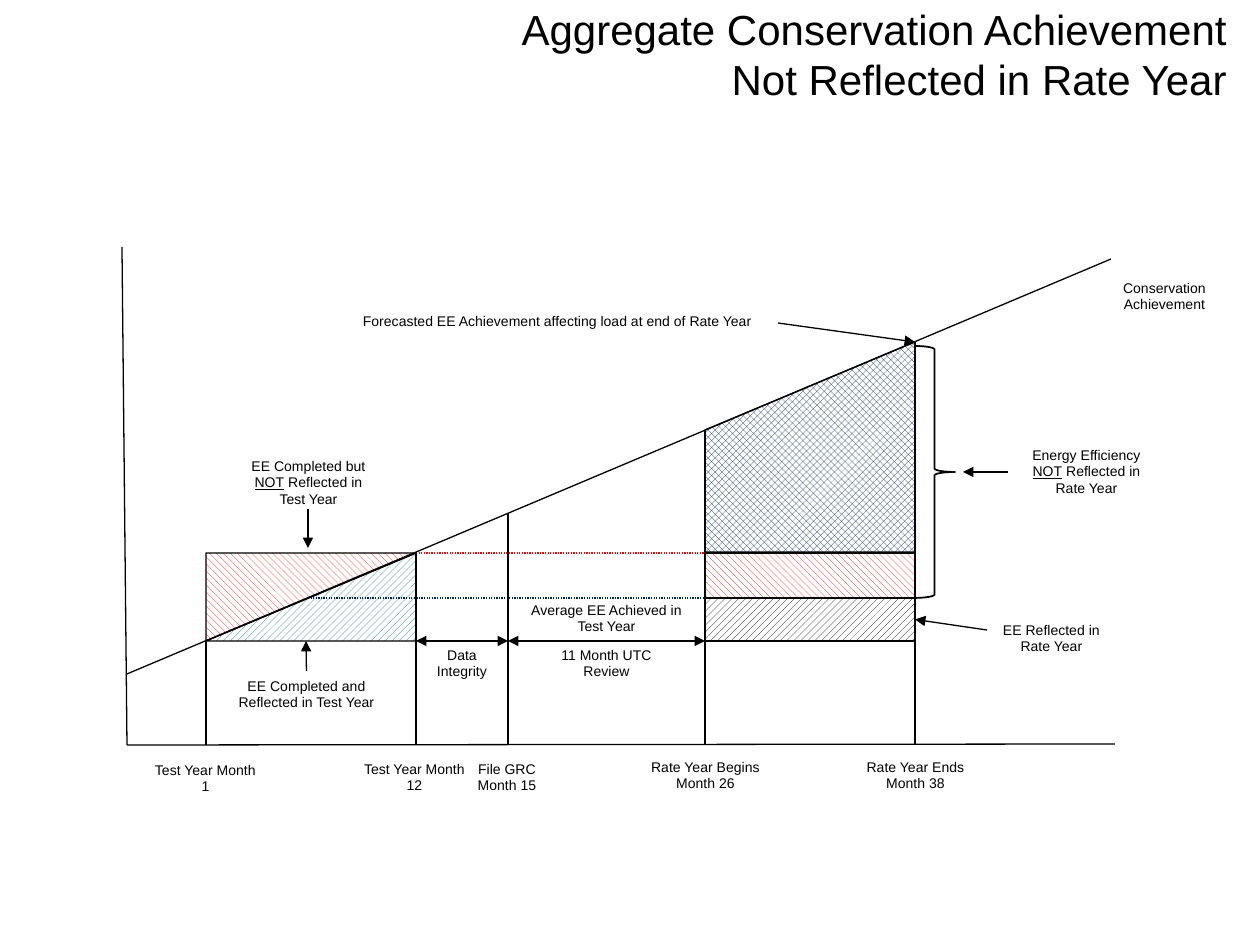
from dataclasses import dataclass

from lxml import etree
from pptx import Presentation
from pptx import util as u
from pptx.dml.color import RGBColor
from pptx.enum import dml, shapes, text
from pptx.oxml.ns import qn

SCALE = 914400 / 126  # EMU in one px


@dataclass(frozen=True)
class Theme:
    font: str = "Arial"
    ink: str = "000000"
    paper: str = "FFFFFF"
    green: str = "006A71"
    red: str = "FF0000"
    navy: str = "00234B"
    title_size: int = 24
    label_size: int = 8
    thin: float = 0.75
    brace: float = 1


THEME = Theme()
UP = dml.MSO_PATTERN.WIDE_UPWARD_DIAGONAL
DOWN = dml.MSO_PATTERN.WIDE_DOWNWARD_DIAGONAL
DIAMOND = dml.MSO_PATTERN.OUTLINED_DIAMOND

# Months along the time axis, and levels of achievement
TEST_START, TEST_END, FILING, RATE_START, RATE_END = 206, 416, 508, 705, 915
AXIS, BOTTOM, AVERAGE, TOP = 745, 641, 598, 553
TREND_START, TREND_END = (127, 674), (1111, 259)


def px(value):
    return u.Emu(round(value * SCALE))


def trend(x):
    """Height of the achievement line at x."""
    (x0, y0), (x1, y1) = TREND_START, TREND_END
    return round(y0 + (x - x0) * (y1 - y0) / (x1 - x0))


def set_all(target, values):
    for name, value in values.items():
        setattr(target, name, value)


def add_text(slide, wording, left, top, width, height, size, frame_format, align):
    box = slide.shapes.add_textbox(*map(px, (left, top, width, height)))
    set_all(box.text_frame, {"word_wrap": True, **frame_format})
    paragraph = box.text_frame.paragraphs[0]
    paragraph.alignment = align
    for part in filter(None, wording.partition("NOT")):
        run = paragraph.add_run()
        run.text = part
        set_all(run.font, {"name": THEME.font, "size": u.Pt(size),
                           "underline": part == "NOT"})
        run.font.color.rgb = RGBColor.from_string(THEME.ink)
    return box


def add_label(slide, wording, left, top, width, lines=2):
    return add_text(slide, wording, left, top, width, 13 + 17 * lines, THEME.label_size,
                    {"auto_size": text.MSO_AUTO_SIZE.SHAPE_TO_FIT_TEXT},
                    text.PP_ALIGN.CENTER)


def style_outline(line, color=THEME.ink, width=THEME.thin):
    line.width = u.Pt(width)
    line.color.rgb = RGBColor.from_string(color)


def style_area(area, pattern, color):
    area.shadow.inherit = False
    area.fill.patterned()
    area.fill.pattern = pattern
    area.fill.fore_color.rgb = RGBColor.from_string(color)
    area.fill.back_color.rgb = RGBColor.from_string(THEME.paper)
    style_outline(area.line)


def add_area(slide, kind, left, top, right, bottom, pattern, color):
    area = slide.shapes.add_shape(kind, *map(px, (left, top, right - left, bottom - top)))
    style_area(area, pattern, color)
    return area


def add_triangle(slide, pattern, color, rotation):
    """Half of the test year block, cut by the achievement line."""
    half = add_area(slide, shapes.MSO_SHAPE.RIGHT_TRIANGLE,
                    TEST_START, TOP, TEST_END, BOTTOM, pattern, color)
    half.rotation = rotation
    half._element.spPr.find(qn("a:xfrm")).set("flipV", "1")


def add_line(slide, start, end, color=THEME.ink, dotted=False, heads=()):
    line = slide.shapes.add_connector(shapes.MSO_CONNECTOR.STRAIGHT,
                                      *map(px, (*start, *end)))
    style_outline(line.line, color)
    if dotted:
        line.line.dash_style = dml.MSO_LINE.ROUND_DOT
    properties = line._element.spPr
    for head in heads:
        etree.SubElement(properties.find(qn("a:ln")), qn(f"a:{head}"), type="triangle")
    etree.SubElement(properties, qn("a:effectLst"))
    return line


def add_areas(slide):
    rectangle = shapes.MSO_SHAPE.RECTANGLE
    # Test year, with its levels carried over to the rate year
    add_triangle(slide, UP, THEME.green, 180)
    add_line(slide, (308, AVERAGE), (RATE_END, AVERAGE), THEME.navy, dotted=True)
    add_triangle(slide, DOWN, THEME.red, 0)
    add_line(slide, (TEST_END, TOP), (RATE_END, TOP), THEME.red, dotted=True)
    # Rate year
    reflected = add_area(slide, rectangle, RATE_START, AVERAGE, RATE_END, BOTTOM,
                         UP, THEME.ink)
    add_area(slide, rectangle, RATE_START, TOP, RATE_END, AVERAGE, DOWN, THEME.red)
    builder = slide.shapes.build_freeform(RATE_START, trend(RATE_START), scale=SCALE)
    builder.add_line_segments([(RATE_START, TOP - 1), (RATE_END, TOP - 1),
                               (RATE_END, trend(RATE_END))], close=True)
    style_area(builder.convert_to_shape(), DIAMOND, THEME.navy)
    return reflected


def add_axes(slide):
    origin = (127, AXIS)
    add_line(slide, (122, 247), origin)
    add_line(slide, origin, (1115, AXIS - 1))
    add_line(slide, TREND_START, TREND_END)
    for month in (TEST_START, TEST_END, FILING, RATE_START, RATE_END):
        add_line(slide, (month, trend(month)), (month, AXIS))
    # Spans between test year, filing and rate year
    for begin, finish in ((TEST_END, FILING), (FILING, RATE_START)):
        add_line(slide, (begin, BOTTOM), (finish, BOTTOM), heads=("headEnd", "tailEnd"))


def add_labels(slide):
    # Months
    for wording, left, top, width in (
        ("Test Year Month 1", 141, 755, 129),
        ("Test Year Month 12", 350, 754, 129),
        ("File GRC Month 15", 446, 754, 122),
        ("Rate Year Begins Month 26", 626, 752, 159),
        ("Rate Year Ends Month 38", 837, 752, 157),
        # Periods and levels
        ("Data Integrity", 409, 640, 106),
        ("11 Month UTC Review", 534, 640, 145),
        ("Average EE Achieved in Test Year", 514, 595, 185),
        ("Conservation Achievement", 1086, 273, 157),
        ("EE Reflected in Rate Year", 987, 615, 129),
    ):
        add_label(slide, wording, left, top, width)
    add_label(slide, "Forecasted EE Achievement affecting load at end of Rate Year",
              346, 306, 423, lines=1)
    add_label(slide, "EE Completed but NOT Reflected in Test Year", 230, 451, 157, lines=3)


def add_callouts(slide, reflected):
    arrow = {"heads": ("tailEnd",)}
    completed = add_label(slide, "EE Completed and Reflected in Test Year", 220, 671, 173)
    missing = add_label(slide, "Energy Efficiency NOT Reflected in Rate Year",
                        1008, 440, 157, lines=3)
    add_line(slide, (308, 509), (308, 548), **arrow)
    add_line(slide, (778, 323), (RATE_END, trend(RATE_END)), **arrow)
    add_line(slide, (306, 669), (306, BOTTOM), **arrow).begin_connect(completed, 0)
    add_line(slide, (1008, 472), (963, 472), **arrow).begin_connect(missing, 1)
    add_line(slide, (987, 630), (RATE_END, 620), **arrow).end_connect(reflected, 3)
    # Brace over everything not reflected
    brace = slide.shapes.add_shape(shapes.MSO_SHAPE.RIGHT_BRACE,
                                   *map(px, (914, 346, 41, 252)))
    brace.shadow.inherit = False
    brace.fill.background()
    style_outline(brace.line, width=THEME.brace)


def main():
    deck = Presentation()
    set_all(deck, {"slide_width": px(1260), "slide_height": px(945)})
    slide = deck.slides.add_slide(deck.slide_layouts[6])
    add_text(slide, "Aggregate Conservation Achievement Not Reflected in Rate Year",
             462, 22, 777, 63, THEME.title_size,
             {"vertical_anchor": text.MSO_ANCHOR.MIDDLE}, text.PP_ALIGN.RIGHT)
    reflected = add_areas(slide)
    add_axes(slide)
    add_labels(slide)
    add_callouts(slide, reflected)
    deck.save("out.pptx")


if __name__ == "__main__":
    main()
